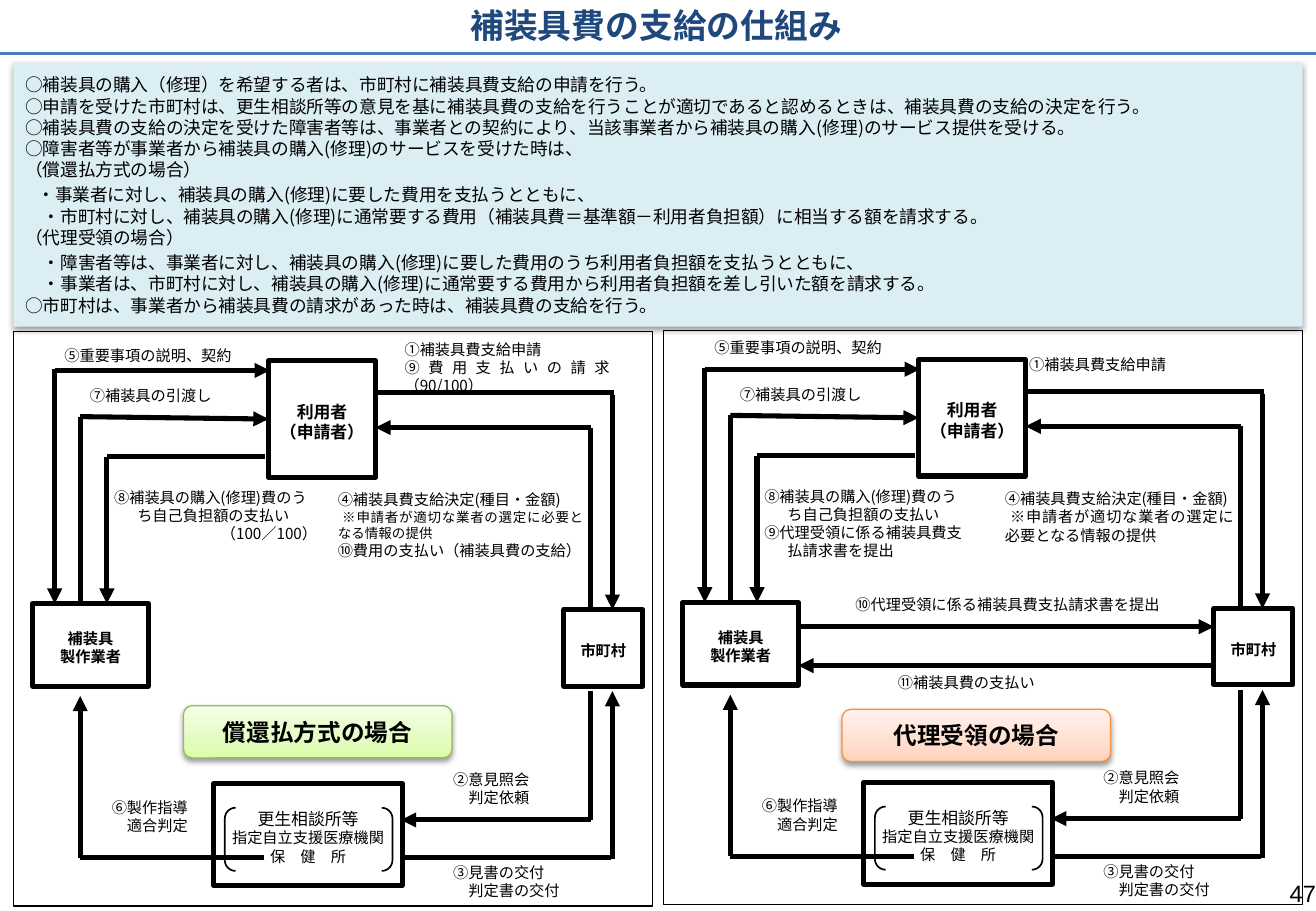
from copy import deepcopy
from lxml import etree
from pptx import Presentation, util as u
from pptx.dml.color import RGBColor
from pptx.enum import shapes, text
from pptx.oxml.ns import qn

PX = 9144  # 100 px to the inch
COLORS = {"ink": "000000", "paper": "FFFFFF", "title": "1F497D", "rule": "4B7EBC", "summary": "DBEEF4"}
JP = "Noto Sans CJK JP"
SHAPE, ALIGN, ANCHOR = shapes.MSO_SHAPE, text.PP_ALIGN, text.MSO_ANCHOR
LABEL_INSETS = (8, 5, 8, 1)


def write(sp, paras, size=9, bold=False, align=ALIGN.JUSTIFY, anchor=ANCHOR.TOP,
          insets=LABEL_INSETS, font=JP, color="ink", indent=(0, 0)):
    """Fill a shape with paragraphs, each a string or a (string, size) or (string, size, align) tuple.

    indent is the left margin and the first-line indent.
    """
    tf = sp.text_frame
    tf.word_wrap, tf.vertical_anchor = True, anchor
    tf.margin_left, tf.margin_top, tf.margin_right, tf.margin_bottom = [v * PX for v in insets]
    for i, para in enumerate(paras):
        words, pt, al = (para if isinstance(para, tuple) else (para,)) + (size, align)[-3 + (
            len(para) if isinstance(para, tuple) else 1):] if not isinstance(para, tuple) or len(para) < 3 else para
        p = tf.paragraphs[0] if i == 0 else tf.add_paragraph()
        p.text, p.alignment = words, al
        p.font.size, p.font.bold, p.font.name = u.Pt(pt), bold, font
        p.font.color.rgb = RGBColor.from_string(COLORS[color])
        pPr = p._p.get_or_add_pPr()
        etree.SubElement(pPr.find(qn("a:defRPr")), qn("a:ea")).set("typeface", JP)
        pPr.set("marL", str(indent[0] * PX))
        pPr.set("indent", str(indent[1] * PX))


def add_box(parent, kind, x, y, w, h, fill=None, line=None, width=0.75, shadow=False):
    sp = parent.add_shape(kind, x * PX, y * PX, w * PX, h * PX)
    if isinstance(fill, list):
        sp.fill.gradient()
        sp.fill.gradient_angle = 90
        stops = sp._element.spPr.find(".//" + qn("a:gsLst"))
        stops.insert(1, deepcopy(stops[0]))
        for stop, gs, pos, color in zip(sp.fill.gradient_stops, stops, (0, 35, 100), fill):
            stop.color.rgb = RGBColor.from_string(color)
            gs.set("pos", str(pos * 1000))
    elif fill:
        sp.fill.solid()
        sp.fill.fore_color.rgb = RGBColor.from_string(fill)
    else:
        sp.fill.background()
    if line:
        sp.line.color.rgb = RGBColor.from_string(line)
        sp.line.width = u.Pt(width)
    else:
        sp.line.fill.background()
    sp.shadow.inherit = False
    if shadow:
        outer = etree.SubElement(sp._element.spPr.find(qn("a:effectLst")), qn("a:outerShdw"),
                                 blurRad="40000", dist="20000", dir="5400000", rotWithShape="0")
        black = etree.SubElement(outer, qn("a:srgbClr"), val=COLORS["ink"])
        etree.SubElement(black, qn("a:alpha"), val="38000")
    return sp


prs = Presentation()
prs.slide_width, prs.slide_height = 1083 * PX, 750 * PX
s = prs.slides.add_slide(prs.slide_layouts[5])

title = s.shapes.title
title.left, title.top, title.width, title.height = 377 * PX, -3 * PX, 503 * PX, 47 * PX
write(title, ["補装具費の支給の仕組み"], 20, True, ALIGN.LEFT, ANCHOR.MIDDLE, (10, 5, 10, 5), color="title")

summary = add_box(s.shapes, SHAPE.RECTANGLE, 11, 52, 1061, 217, COLORS["summary"], shadow=True)
write(summary, [
    "○補装具の購入（修理）を希望する者は、市町村に補装具費支給の申請を行う。\v"
    "○申請を受けた市町村は、更生相談所等の意見を基に補装具費の支給を行うことが適切であると認めるときは、補装具費の支給の決定を行う。\v"
    "○補装具費の支給の決定を受けた障害者等は、事業者との契約により、当該事業者から補装具の購入(修理)のサービス提供を受ける。\v"
    "○障害者等が事業者から補装具の購入(修理)のサービスを受けた時は、\v"
    "（償還払方式の場合）",
    "・事業者に対し、補装具の購入(修理)に要した費用を支払うとともに、\v"
    "　・市町村に対し、補装具の購入(修理)に通常要する費用（補装具費＝基準額－利用者負担額）に相当する額を請求する。\v"
    "（代理受領の場合）",
    "　・障害者等は、事業者に対し、補装具の購入(修理)に要した費用のうち利用者負担額を支払うとともに、\v"
    "　・事業者は、市町村に対し、補装具の購入(修理)に通常要する費用から利用者負担額を差し引いた額を請求する。\v"
    "○市町村は、事業者から補装具費の請求があった時は、補装具費の支給を行う。",
], 10.5, align=ALIGN.LEFT, anchor=ANCHOR.MIDDLE, insets=(10, 5, 10, 5))
for p in summary.text_frame.paragraphs:
    p.space_before = u.Pt(2.4)
summary.text_frame.paragraphs[1]._p.pPr.set("indent", str(10 * PX))

# Everything below is placed as in the left panel; the right panel is the same, shifted.
BOXES = {
    "city": (464, 502, 65, 63, 9, True, ["市町村"]),
    "maker": (27, 497, 95, 68, 9, True, ["補装具", "製作業者"]),
    "user": (221, 297, 88, 96, 10, True, ["利用者", "（申請者）"]),
    "center": (176, 645, 155, 84, 9, False, [("更生相談所等", 10), "指定自立支援医療機関", "保　健　所"]),
}
LINES = [  # x1, y1, x2, y2, arrowhead at the end
    (309, 323, 505, 323, False), (504, 325, 504, 502, True),
    (486, 502, 486, 352, False), (486, 352, 309, 352, True),
    (66, 497, 66, 343, False), (66, 343, 221, 345, True),
    (45, 305, 222, 305, True), (45, 304, 45, 497, True),
    (218, 376, 88, 376, False), (88, 376, 88, 497, True),
    (486, 569, 486, 675, False), (486, 675, 330, 675, True),
    (330, 706, 503, 706, False), (504, 707, 504, 569, True),
    (217, 706, 66, 706, False), (66, 706, 66, 573, True),
]
LABELS = [  # x, y, w, h, paragraphs
    (66, 313, 139, 37, ["⑦補装具の引渡し"]),
    (365, 629, 108, 46, ["②意見照会", "　判定依頼"]),
    (365, 706, 132, 42, ["③見書の交付", "　判定書の交付"]),
    (84, 652, 104, 62, ["⑥製作指導", "　適合判定"]),
]
CONTRACT, APPLY, DECIDE = "⑤重要事項の説明、契約", "①補装具費支給申請", "④補装具費支給決定(種目・金額)"
NOTE = " ※申請者が適切な業者の選定に必要となる情報の提供"
SELF_PAY = "⑧補装具の購入(修理)費のうち自己負担額の支払い"
PANELS = [
    dict(dx=0, dy=0, lines=[], labels=[
        (45, 280, 172, 24, [CONTRACT]),
        (325, 275, 204, 38, [APPLY, "⑨費用支払いの請求　（90/100）"]),
        (270, 399, 218, 79, [DECIDE, (NOTE, 8), "⑩費用の支払い（補装具費の支給）"])],
        costs=[SELF_PAY, ("（100／100）", 9, ALIGN.RIGHT)],
        banner=(151, 581, "償還払方式の場合", ["DAFDA7", "E4FCC2", "F5FFE7"], "98B955")),
    dict(dx=535, dy=-1, lines=[(122, 517, 464, 517, True), (464, 549, 122, 549, True)], labels=[
        (45, 275, 172, 46, [CONTRACT]),
        (304, 289, 143, 34, [APPLY]),
        (284, 399, 204, 79, [DECIDE, NOTE]),
        (161, 486, 268, 27, ["⑩代理受領に係る補装具費支払請求書を提出"]),
        (196, 550, 138, 54, ["⑪補装具費の支払い"])],
        costs=[SELF_PAY, "⑨代理受領に係る補装具費支払請求書を提出"],
        banner=(693, 584, "代理受領の場合", ["FFD2BD", "FFDED0", "FFF2ED"], "F69240")),
]

for panel in PANELS:
    dx, dy = panel["dx"], panel["dy"]
    group = s.shapes.add_group_shape().shapes
    add_box(group, SHAPE.RECTANGLE, 11 + dx, 273 + dy, 526, 473, line=COLORS["ink"])
    boxes = {}
    for name, (x, y, w, h, size, bold, paras) in BOXES.items():
        boxes[name] = add_box(group, SHAPE.RECTANGLE, x + dx, y + dy, w, h, COLORS["paper"], COLORS["ink"], 3)
        write(boxes[name], paras, size, bold, ALIGN.CENTER, ANCHOR.MIDDLE)
    bracket = add_box(group, SHAPE.DOUBLE_BRACKET, 185 + dx, 665 + dy, 138, 52, line=COLORS["ink"], width=1)
    bracket.adjustments[0] = 0.17

    for x, y, w, h, paras in LABELS + panel["labels"]:
        write(group.add_textbox((x + dx) * PX, (y + dy) * PX, w * PX, h * PX), paras)
    costs = group.add_textbox((86 + dx) * PX, (397 + dy) * PX, 183 * PX, 69 * PX)
    write(costs, panel["costs"], align=ALIGN.LEFT, indent=(19, -19))

    for x1, y1, x2, y2, arrow in LINES + panel["lines"]:
        c = group.add_connector(shapes.MSO_CONNECTOR.STRAIGHT, (x1 + dx) * PX, (y1 + dy) * PX,
                                (x2 + dx) * PX, (y2 + dy) * PX)
        c.line.color.rgb = RGBColor.from_string(COLORS["ink"])
        c.line.width = u.Pt(3)
        if arrow:
            etree.SubElement(c.line._ln, qn("a:tailEnd"), type="triangle")
        etree.SubElement(c._element.spPr, qn("a:effectLst"))
        if (x2, y2) == (221, 345):
            c.end_connect(boxes["user"], 1)

    x, y, words, fill, edge = panel["banner"]
    banner = add_box(s.shapes, SHAPE.ROUNDED_RECTANGLE, x, y, 221, 43, fill, edge, shadow=True)
    write(banner, [words], 14, True, ALIGN.CENTER, ANCHOR.MIDDLE, (4, 1, 4, 1), "Arial")

rule = s.shapes.add_connector(shapes.MSO_CONNECTOR.STRAIGHT, 0, 44 * PX, 1083 * PX, 44 * PX)
rule.line.color.rgb = RGBColor.from_string(COLORS["rule"])
rule.line.width = u.Pt(2.25)
etree.SubElement(rule._element.spPr, qn("a:effectLst"))

number = s.shapes.add_textbox(840 * PX, 719 * PX, 243 * PX, 31 * PX)
write(number, ["47"], 14, align=ALIGN.RIGHT, insets=(10, 5, 0, 5), font="Arial")

prs.save("out.pptx")
